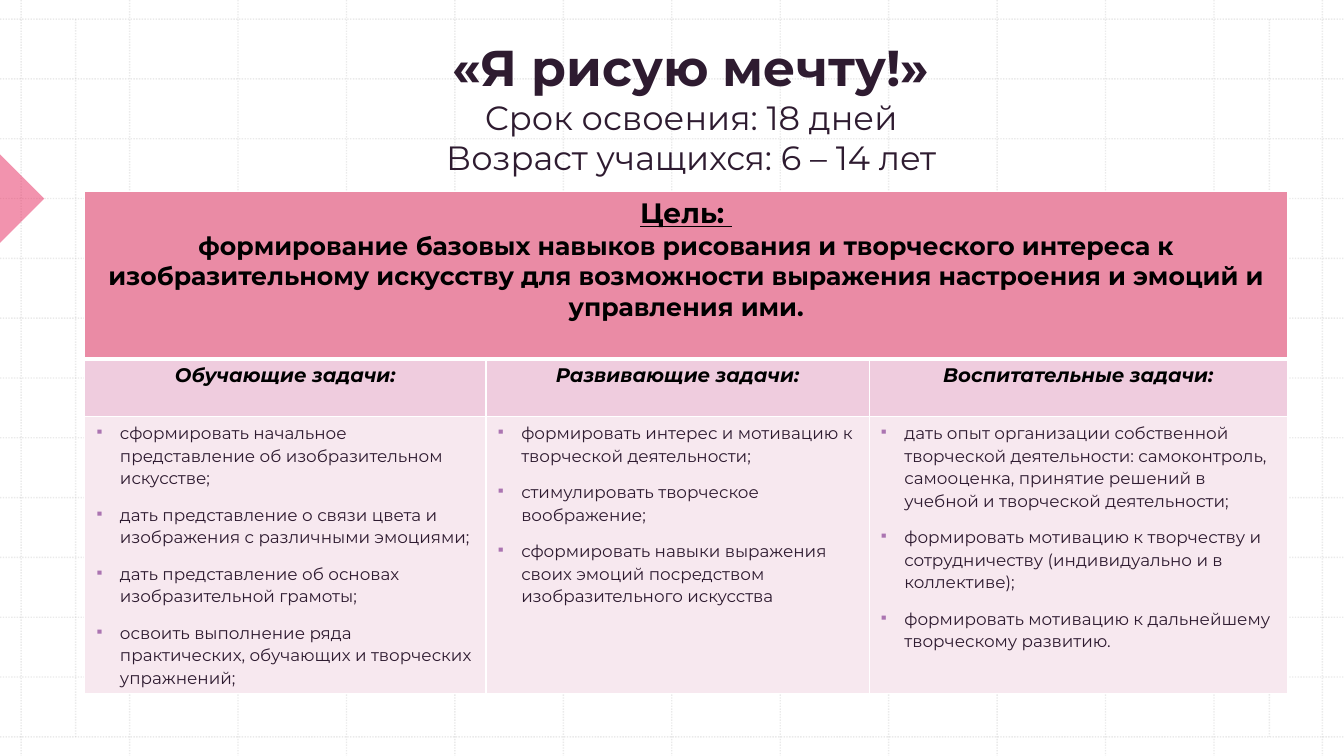
from lxml.etree import SubElement
from pptx import Presentation
from pptx.dml.color import RGBColor
from pptx.enum.dml import MSO_LINE
from pptx.enum.shapes import MSO_CONNECTOR, MSO_SHAPE
from pptx.enum.text import MSO_ANCHOR, MSO_AUTO_SIZE, PP_ALIGN
from pptx.oxml.ns import qn
from pptx.util import Inches, Pt

INK = "2E1B30"
BLACK = "000000"
GOAL = (
    "формирование базовых навыков рисования и творческого интереса к "
    "изобразительному искусству для возможности выражения настроения и эмоций и управления ими."
)
TASKS = {
    "Обучающие задачи:": [
        "сформировать начальное представление об изобразительном искусстве;",
        "дать представление о связи цвета и изображения с различными эмоциями;",
        "дать представление об основах изобразительной грамоты;",
        "освоить выполнение ряда практических, обучающих и творческих упражнений;",
    ],
    "Развивающие задачи:": [
        "формировать интерес и мотивацию к творческой деятельности;",
        "стимулировать творческое воображение;",
        "сформировать навыки выражения своих эмоций посредством изобразительного искусства",
    ],
    "Воспитательные задачи:": [
        "дать опыт организации собственной творческой деятельности: самоконтроль, "
        "самооценка, принятие решений в учебной и творческой деятельности;",
        "формировать мотивацию к творчеству и сотрудничеству (индивидуально и в коллективе);",
        "формировать мотивацию к дальнейшему творческому развитию.",
    ],
}


def rgb(value):
    return RGBColor.from_string(value)


def add_run(paragraph, text, size, color=INK, bold=False, italic=False, underline=False):
    run = paragraph.add_run()
    run.text = text
    font = run.font
    font.name, font.size = "Montserrat", Pt(size)
    font.bold, font.italic, font.underline = bold, italic, underline
    font.color.rgb = rgb(color)


def set_alpha(element, percent):
    for color in element.iter(qn("a:srgbClr")):
        SubElement(color, qn("a:alpha"), val=str(percent * 1000))


def add_grid_line(slide, x1, y1, x2, y2):
    line = slide.shapes.add_connector(
        MSO_CONNECTOR.STRAIGHT, Inches(x1), Inches(y1), Inches(x2), Inches(y2))
    line.line.color.rgb = rgb("BCBCBC")
    line.line.width = Pt(1)
    line.line.dash_style = MSO_LINE.ROUND_DOT
    properties = line.element.spPr
    set_alpha(properties, 30)
    SubElement(properties, qn("a:effectLst"))


def add_background(slide, width, height):
    top, bottom = 0.19, 7.31
    for column in range(13):
        x = 0.21 + column * 1.0755
        add_grid_line(slide, x, 0, x, height)
    for row in range(13):
        y = top + row * (bottom - top) / 12
        add_grid_line(slide, 0, y, width, y)
    for x in (0.75, 12.59):
        add_grid_line(slide, x, top, x, bottom)

    side = 0.62
    marker = slide.shapes.add_shape(
        MSO_SHAPE.RIGHT_TRIANGLE, Inches(-side / 2), Inches(1.66), Inches(side), Inches(side))
    marker.rotation = 225
    marker.shadow.inherit = False
    marker.fill.solid()
    marker.fill.fore_color.rgb = rgb("E7295E")
    set_alpha(marker.element.spPr, 50)
    marker.line.fill.background()


def add_heading(slide, left, top, width, height):
    title = slide.shapes.title
    title.left, title.top = Inches(left), Inches(top)
    title.width, title.height = Inches(width), Inches(height)
    frame = title.text_frame
    frame.auto_size = MSO_AUTO_SIZE.NONE
    frame.word_wrap = True
    frame.vertical_anchor = MSO_ANCHOR.BOTTOM
    frame.margin_bottom = Inches(0.77)
    paragraph = frame.paragraphs[0]
    paragraph.alignment = PP_ALIGN.CENTER
    add_run(paragraph, "«Я рисую мечту!»", 36, bold=True)
    for detail in ("Срок освоения: 18 дней", "Возраст учащихся: 6 – 14 лет"):
        paragraph.add_line_break()
        add_run(paragraph, detail, 24)
    title.element.getparent().append(title.element)


def style_cell(cell, fill, bottom_border=1):
    properties = cell._tc.get_or_add_tcPr()
    for side, points in (("L", 1), ("R", 1), ("T", 1), ("B", bottom_border)):
        border = SubElement(properties, qn(f"a:ln{side}"), w=str(Pt(points)))
        SubElement(SubElement(border, qn("a:solidFill")), qn("a:srgbClr"), val="FFFFFF")
    cell.fill.solid()
    cell.fill.fore_color.rgb = rgb(fill)


def add_task(paragraph, task):
    paragraph.line_spacing = 1.1
    paragraph.space_before = Pt(10)
    properties = paragraph._p.get_or_add_pPr()
    properties.set("marL", str(Inches(0.25)))
    properties.set("indent", str(Inches(-0.25)))
    SubElement(SubElement(properties, qn("a:buClr")), qn("a:srgbClr"), val="AB74B1")
    SubElement(properties, qn("a:buSzPct"), val="75000")
    SubElement(properties, qn("a:buChar"), char="▪")
    add_run(paragraph, task, 12)


def add_goal_table(slide, left, top, column_widths, row_heights):
    table = slide.shapes.add_table(
        len(row_heights), len(column_widths), Inches(left), Inches(top),
        Inches(sum(column_widths)), Inches(sum(row_heights))).table
    table.first_row = table.horz_banding = False
    for column, width in zip(table.columns, column_widths):
        column.width = Inches(width)
    for row, height in zip(table.rows, row_heights):
        row.height = Inches(height)

    goal = table.cell(0, 0)
    goal.merge(table.cell(0, len(column_widths) - 1))
    for cell in table.rows[0].cells:
        style_cell(cell, "EA8BA5", 3)
    caption = goal.text_frame.paragraphs[0]
    statement = goal.text_frame.add_paragraph()
    caption.alignment = statement.alignment = PP_ALIGN.CENTER
    add_run(caption, "Цель: ", 20, BLACK, bold=True, underline=True)
    add_run(statement, GOAL, 18, BLACK, bold=True)

    for index, (heading, tasks) in enumerate(TASKS.items()):
        header, body = table.cell(1, index), table.cell(2, index)
        style_cell(header, "EFCCDE")
        style_cell(body, "F7E8EF")
        paragraph = header.text_frame.paragraphs[0]
        paragraph.alignment = PP_ALIGN.CENTER
        add_run(paragraph, heading, 14, BLACK, bold=True, italic=True)
        for number, task in enumerate(tasks):
            frame = body.text_frame
            add_task(frame.add_paragraph() if number else frame.paragraphs[0], task)


def main():
    width, height = 13.33, 7.5
    deck = Presentation()
    deck.slide_width, deck.slide_height = Inches(width), Inches(height)
    slide = deck.slides.add_slide(deck.slide_layouts[5])
    add_background(slide, width, height)
    add_goal_table(slide, 0.84, 1.9, (3.98, 3.8, 4.15), (1.66, 0.57, 2.75))
    add_heading(slide, 1.21, -0.21, 11.29, 2.74)
    deck.save("out.pptx")


if __name__ == "__main__":
    main()
